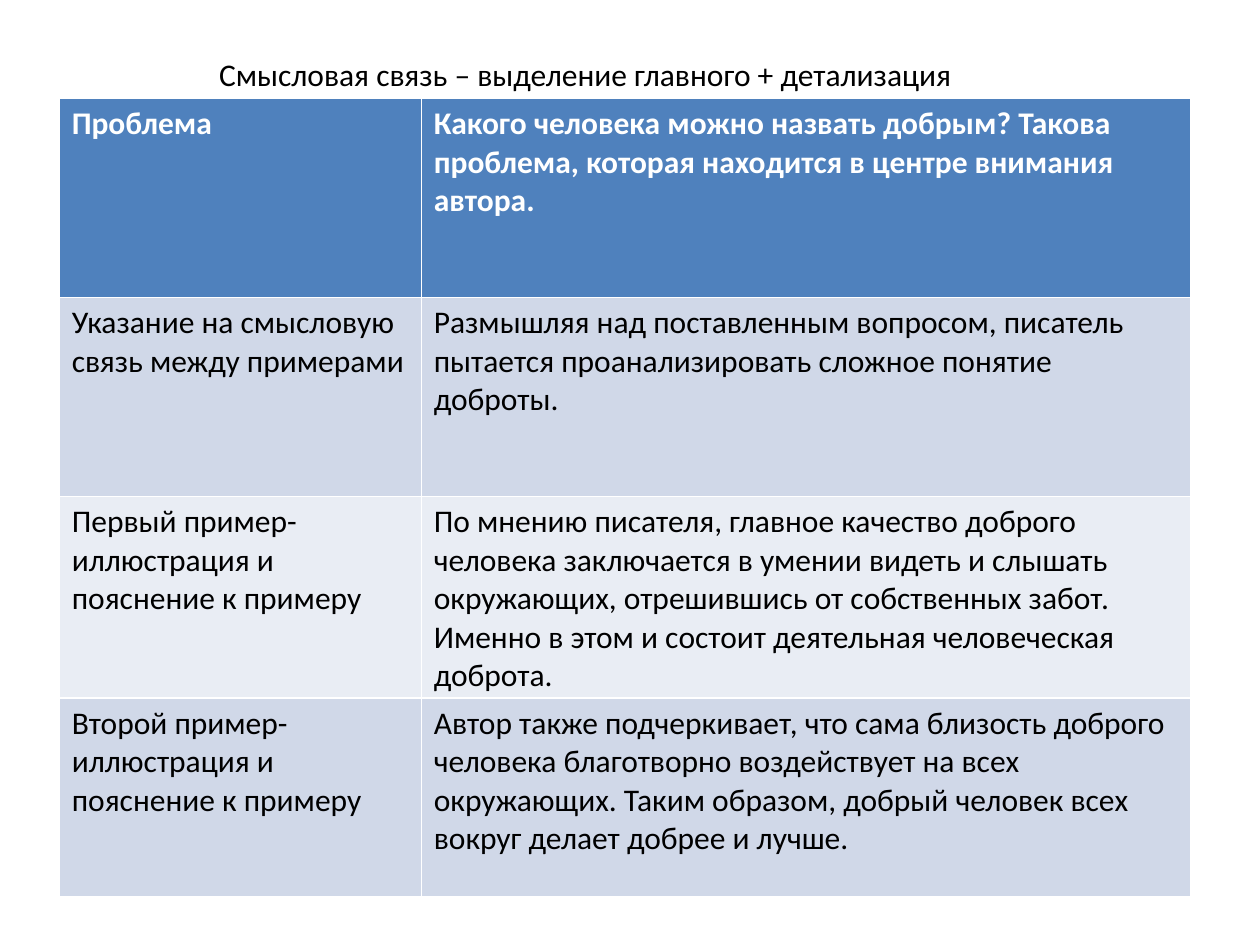
import pptx
import pptx.dml.color
import pptx.util

RGBColor = pptx.dml.color.RGBColor
Inches = pptx.util.Inches

BLACK = RGBColor(0x00, 0x00, 0x00)
WHITE = RGBColor(0xFF, 0xFF, 0xFF)
BLUE = RGBColor(0x4F, 0x81, 0xBD)
BANDS = [RGBColor(0xD0, 0xD8, 0xE8), RGBColor(0xE9, 0xED, 0xF4)]

TITLE = "Смысловая связь – выделение главного + детализация"
ROWS = [
    ("Проблема",
     "Какого человека можно назвать добрым? Такова проблема, "
     "которая находится в центре внимания автора."),
    ("Указание на смысловую связь между примерами",
     "Размышляя над поставленным вопросом, писатель пытается "
     "проанализировать сложное понятие доброты."),
    ("Первый пример-иллюстрация и пояснение к примеру",
     "По мнению писателя, главное качество доброго человека заключается "
     "в умении видеть и слышать окружающих, отрешившись от собственных "
     "забот. Именно в этом и состоит деятельная человеческая доброта."),
    ("Второй пример-иллюстрация и пояснение к примеру",
     "Автор также подчеркивает, что сама близость доброго человека "
     "благотворно воздействует на всех окружающих. Таким образом, "
     "добрый человек всех вокруг делает добрее и лучше."),
]
FIRST_COLUMN_SHARE = 0.32


def write(tf, text, color, bold=False):
    tf.text = text
    font = tf.paragraphs[0].runs[0].font
    font.name = "Calibri"
    font.size = pptx.util.Pt(18)
    font.bold = bold
    font.color.rgb = color


def add_title(slide, x, y, w, h):
    tf = slide.shapes.add_textbox(x, y, w, h).text_frame
    tf.word_wrap = False
    write(tf, TITLE, BLACK)


def add_plan_table(slide, x, y, w, h):
    """Header row and banded rows; the table style draws the white borders."""
    table = slide.shapes.add_table(len(ROWS), 2, x, y, w, h).table
    table.columns[0].width = int(w * FIRST_COLUMN_SHARE)
    table.columns[1].width = w - table.columns[0].width
    for i, texts in enumerate(ROWS):
        header = i == 0
        for j, text in enumerate(texts):
            cell = table.cell(i, j)
            cell.fill.solid()
            cell.fill.fore_color.rgb = BLUE if header else BANDS[(i - 1) % 2]
            write(cell.text_frame, text, WHITE if header else BLACK, header)


def main():
    prs = pptx.Presentation()
    prs.slide_width, prs.slide_height = Inches(10), Inches(7.5)
    slide = prs.slides.add_slide(prs.slide_layouts[6])
    add_title(slide, Inches(1.64), Inches(0.39), Inches(6.08), Inches(0.4))
    add_plan_table(slide, Inches(0.47), Inches(0.78), Inches(8.98), Inches(6.32))
    prs.save("out.pptx")


if __name__ == "__main__":
    main()
